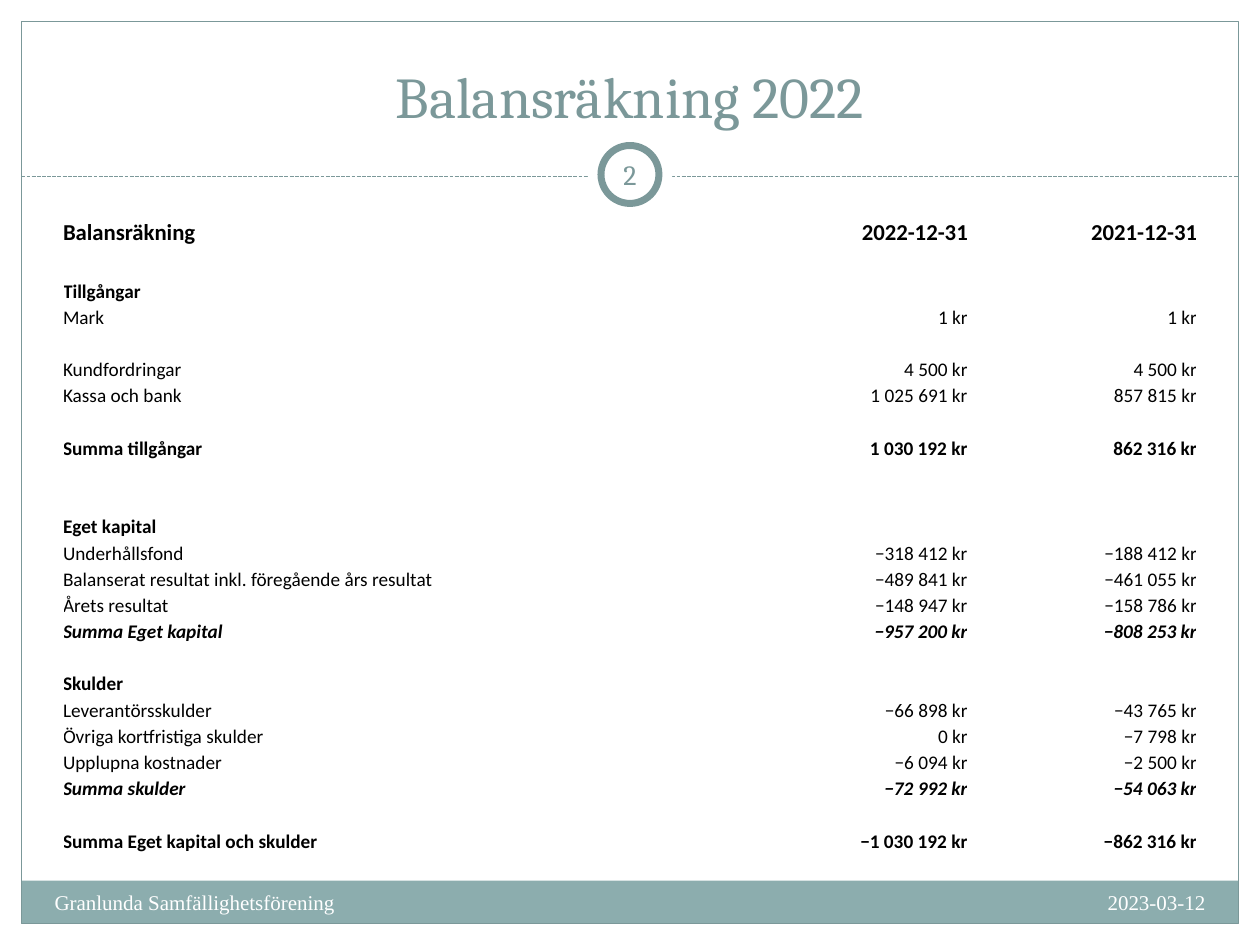
import pptx
import pptx.dml.color
import pptx.enum.dml
import pptx.enum.shapes
import pptx.enum.text
import pptx.oxml
import pptx.util

WIDTH, HEIGHT = 10, 7.5
MARGIN = 0.17
TEAL, PALE_TEAL, WHITE, BLACK = "7B9899", "8CADAE", "FFFFFF", "000000"
ALIGN = pptx.enum.text.PP_ALIGN
ANCHOR = pptx.enum.text.MSO_ANCHOR
SHAPE = pptx.enum.shapes.MSO_SHAPE
DATES = ("2022-12-31", "2021-12-31")
COLUMN_WIDTHS = (5.16, 2.02, 1.82)
HEADER_ROW, BODY_ROW = 0.24, 0.208

# Each row: label, style, amounts in kronor; None is an empty row
BALANCE = [
    None,
    ("Tillgångar", "bold"),
    ("Mark", "plain", 1, 1),
    None,
    ("Kundfordringar", "plain", 4500, 4500),
    ("Kassa och bank", "plain", 1025691, 857815),
    None,
    ("Summa tillgångar", "bold", 1030192, 862316),
    None,
    None,
    ("Eget kapital", "bold"),
    ("Underhållsfond", "plain", -318412, -188412),
    ("Balanserat resultat inkl. föregående års resultat", "plain", -489841, -461055),
    ("Årets resultat", "plain", -148947, -158786),
    ("Summa Eget kapital", "bold italic", -957200, -808253),
    None,
    ("Skulder", "bold"),
    ("Leverantörsskulder", "plain", -66898, -43765),
    ("Övriga kortfristiga skulder", "plain", 0, -7798),
    ("Upplupna kostnader", "plain", -6094, -2500),
    ("Summa skulder", "bold italic", -72992, -54063),
    None,
    ("Summa Eget kapital och skulder", "bold", -1030192, -862316),
]


def color(value):
    return pptx.dml.color.RGBColor.from_string(value)


def inches(box):
    return [pptx.util.Inches(length) for length in box]


def inside(box, left, top, width, height):
    """Return the part of a box given by shares of its size."""
    x, y, w, h = box
    return x + left * w, y + top * h, width * w, height * h


def centred_square(box, side):
    left, top, width, height = box
    return left + (width - side) / 2, top + (height - side) / 2, side, side


def kronor(amount):
    text = f"{amount:,} kr".replace("-", "−")
    return text.replace(",", chr(160)).replace(" ", chr(160))


def write(frame, text, font="Calibri", size=11, fill=BLACK, bold=False,
          italic=False, align=ALIGN.LEFT):
    paragraph = frame.paragraphs[0]
    paragraph.alignment = align
    if not text:
        paragraph._p.get_or_add_endParaRPr().set("sz", str(size * 100))
        return
    run = paragraph.add_run()
    run.text = text
    run.font.name = font
    run.font.size = pptx.util.Pt(size)
    run.font.bold = bold
    run.font.italic = italic
    run.font.color.rgb = color(fill)


def add_text(slide, box, text, anchor=ANCHOR.TOP, wrap=True, **text_format):
    frame = slide.shapes.add_textbox(*inches(box)).text_frame
    frame.word_wrap = wrap
    frame.vertical_anchor = anchor
    frame.margin_left = frame.margin_right = pptx.util.Inches(0.05)
    frame.margin_top = frame.margin_bottom = pptx.util.Inches(0.05)
    write(frame, text, **text_format)


def add_shape(slide, kind, box, fill=None, line=None, line_width=0.75):
    shape = slide.shapes.add_shape(kind, *inches(box))
    shape.shadow.inherit = False
    if fill:
        shape.fill.solid()
        shape.fill.fore_color.rgb = color(fill)
    else:
        shape.fill.background()
    if line:
        shape.line.color.rgb = color(line)
        shape.line.width = pptx.util.Pt(line_width)
    else:
        shape.line.fill.background()


def add_dashed_rule(slide, left, right, y):
    start_x, end_x, level = inches((left, right, y))
    rule = slide.shapes.add_connector(
        pptx.enum.shapes.MSO_CONNECTOR.STRAIGHT, start_x, level, end_x, level)
    rule.line.color.rgb = color(TEAL)
    rule.line.width = pptx.util.Pt(0.75)
    rule.line.dash_style = pptx.enum.dml.MSO_LINE.SQUARE_DOT
    properties = rule._element.spPr
    properties.append(pptx.oxml.parse_xml(
        '<a:effectLst xmlns:a="http://schemas.openxmlformats.org/drawingml/2006/main"/>'))


def add_footer(slide, box, association, date):
    add_shape(slide, SHAPE.RECTANGLE, box, fill=PALE_TEAL)
    style = {"font": "Times New Roman", "size": 12, "fill": WHITE}
    add_text(slide, inside(box, 0.022, 0.06, 0.4, 0.88), association, **style)
    add_text(slide, inside(box, 0.644, 0.06, 0.334, 0.88), date,
             align=ALIGN.RIGHT, **style)


def add_header(slide, box, title, number):
    """Place the title above a rule on the lower edge, with a page badge on it."""
    left, top, width, height = box
    bottom = top + height
    add_dashed_rule(slide, left, left + width, bottom)
    badge = centred_square((left, bottom - 0.35, width, 0.67), 0.67)
    add_shape(slide, SHAPE.OVAL, badge, fill=WHITE)
    ring = centred_square(badge, 0.46)
    add_shape(slide, SHAPE.OVAL, ring, fill=WHITE, line=TEAL, line_width=4)
    style = {"font": "Cambria", "fill": TEAL, "align": ALIGN.CENTER}
    add_text(slide, inside(box, 0.017, 0.065, 0.966, 0.675), title,
             anchor=ANCHOR.BOTTOM, size=33, **style)
    add_text(slide, inside(ring, 0.24, 0.1, 0.52, 0.78), number,
             anchor=ANCHOR.MIDDLE, wrap=False, size=16, **style)


def add_balance_table(slide, box):
    rows = [("Balansräkning", "bold", *DATES)]
    for entry in BALANCE:
        label, style, *amounts = entry or ("", "plain")
        values = [kronor(amount) for amount in amounts] or ["", ""]
        rows.append((label, style, *values))
    table = slide.shapes.add_table(
        len(rows), len(COLUMN_WIDTHS), *inches(box)).table
    table.first_row = table.horz_banding = False
    for column, width in zip(table.columns, COLUMN_WIDTHS):
        column.width = pptx.util.Inches(width)
    for index, (label, style, *values) in enumerate(rows):
        row = table.rows[index]
        row.height = pptx.util.Inches(HEADER_ROW if index < 2 else BODY_ROW)
        for position, (cell, text) in enumerate(zip(row.cells, (label, *values))):
            cell.fill.background()
            cell.vertical_anchor = ANCHOR.BOTTOM
            cell.margin_left = cell.margin_right = 0
            cell.margin_top = cell.margin_bottom = 0
            write(cell.text_frame, text, size=11 if index else 13,
                  bold="bold" in style, italic="italic" in style,
                  align=ALIGN.RIGHT if position else ALIGN.LEFT)


def main():
    presentation = pptx.Presentation()
    presentation.slide_width, presentation.slide_height = inches((WIDTH, HEIGHT))
    slide = presentation.slides.add_slide(presentation.slide_layouts[6])
    page = (MARGIN, MARGIN, WIDTH - 2 * MARGIN, HEIGHT - 2 * MARGIN)
    footer_height = 0.34
    footer_top = HEIGHT - MARGIN - footer_height
    add_footer(slide, (MARGIN, footer_top, page[2], footer_height),
               "Granlunda Samfällighetsförening", "2023-03-12")
    add_shape(slide, SHAPE.RECTANGLE, page, line=TEAL)
    add_header(slide, (MARGIN, MARGIN, page[2], 1.23), "Balansräkning 2022", "2")
    table_height = 2 * HEADER_ROW + (len(BALANCE) - 1) * BODY_ROW
    add_balance_table(slide, (0.5, 1.72, sum(COLUMN_WIDTHS), table_height))
    presentation.save("out.pptx")


if __name__ == "__main__":
    main()
